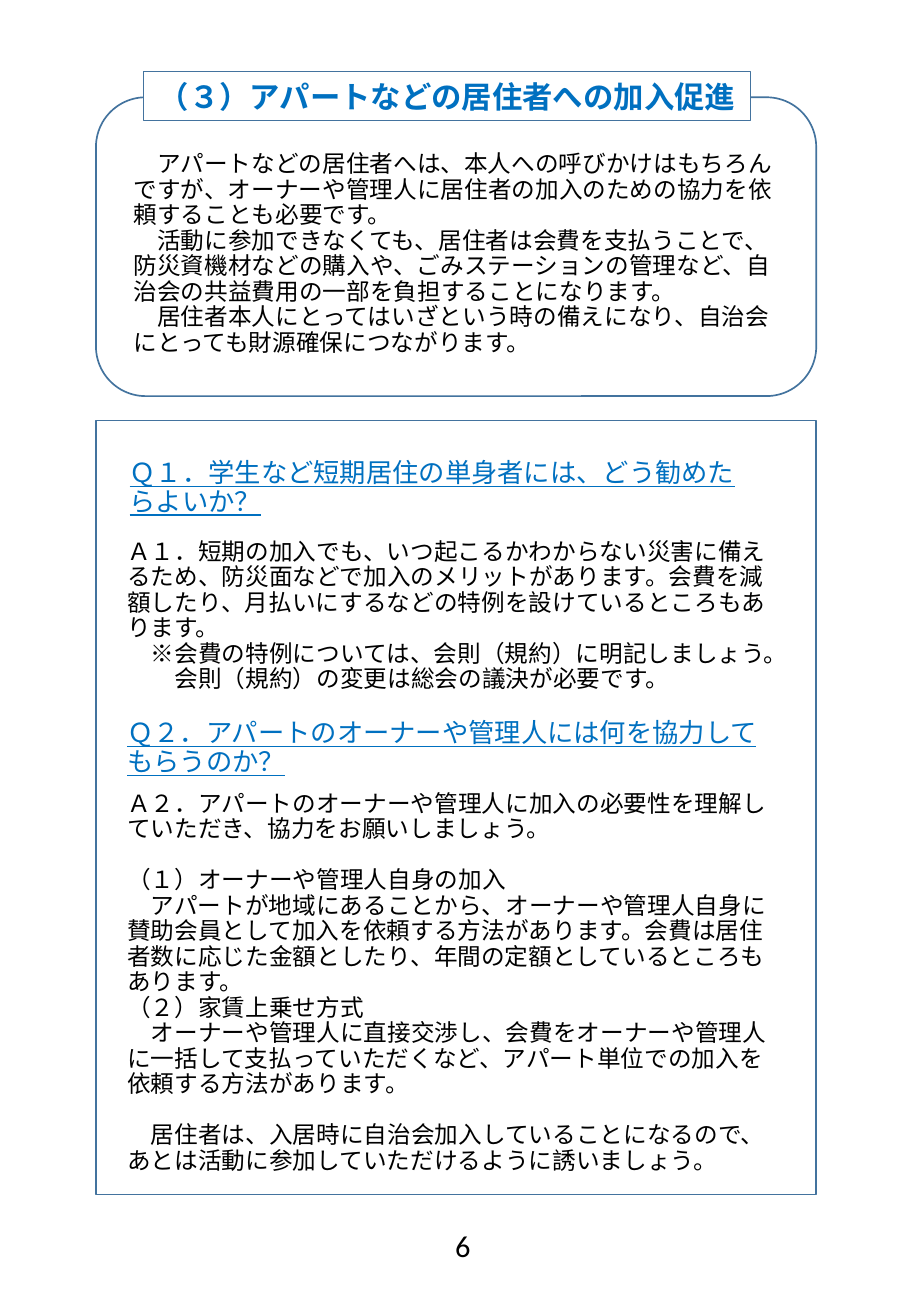
from lxml import etree
from pptx import Presentation
from pptx import util as u
from pptx.dml import color
from pptx.enum import shapes, text
from pptx.oxml import ns

WIDTH, HEIGHT = u.Inches(7.5), u.Inches(10.83)
JAPANESE, LATIN = "Noto Sans CJK JP", "Calibri"
BLUE, BLACK, WHITE, BORDER = "0070C0", "000000", "FFFFFF", "43739E"
BODY_SIZE, QUESTION_SIZE, HEADING_SIZE = 14, 15.6, 18
LINE_RATIO = 1.08  # line pitch as a multiple of the text size

# Paragraphs: first-line indent in characters, blank lines before, wording
INTRO = [
    (1, 0, "アパートなどの居住者へは、本人への呼びかけはもちろんですが、オーナーや管理人に居住者の加入のための協力を依頼することも必要です。"),
    (1, 0, "活動に参加できなくても、居住者は会費を支払うことで、防災資機材などの購入や、ごみステーションの管理など、自治会の共益費用の一部を負担することになります。"),
    (1, 0, "居住者本人にとってはいざという時の備えになり、自治会にとっても財源確保につながります。"),
]
QUESTION_1 = [(0, 0, "Ｑ１．学生など短期居住の単身者には、どう勧めたらよいか？")]
ANSWER_1 = [
    (0, 0, "Ａ１．短期の加入でも、いつ起こるかわからない災害に備えるため、防災面などで加入のメリットがあります。会費を減額したり、月払いにするなどの特例を設けているところもあります。"),
    (1, 0, "※会費の特例については、会則（規約）に明記しましょう。"),
    (2, 0, "会則（規約）の変更は総会の議決が必要です。"),
]
QUESTION_2 = [(0, 0, "Ｑ２．アパートのオーナーや管理人には何を協力してもらうのか？")]
ANSWER_2 = [
    (0, 0, "Ａ２．アパートのオーナーや管理人に加入の必要性を理解していただき、協力をお願いしましょう。"),
    (0, 1, "（１）オーナーや管理人自身の加入"),
    (1, 0, "アパートが地域にあることから、オーナーや管理人自身に賛助会員として加入を依頼する方法があります。会費は居住者数に応じた金額としたり、年間の定額としているところもあります。"),
    (0, 0, "（２）家賃上乗せ方式"),
    (1, 0, "オーナーや管理人に直接交渉し、会費をオーナーや管理人に一括して支払っていただくなど、アパート単位での加入を依頼する方法があります。"),
    (1, 1, "居住者は、入居時に自治会加入していることになるので、あとは活動に参加していただけるように誘いましょう。"),
]


def rgb(value):
    return color.RGBColor.from_string(value)


def share(left, top, width, height):
    """Turn percentages of the slide into lengths."""
    return [round(part * whole / 100) for part, whole in
            zip((left, top, width, height), (WIDTH, HEIGHT) * 2)]


def place(slide, shape, area):
    """Move a placeholder to its area and in front of what is drawn so far."""
    shape.left, shape.top, shape.width, shape.height = share(*area)
    slide.shapes._spTree.append(shape._element)
    return shape


def outline(shape, fill=None, weight=1):
    if fill:
        shape.fill.solid()
        shape.fill.fore_color.rgb = rgb(fill)
    else:
        shape.fill.background()
    shape.line.color.rgb = rgb(BORDER)
    shape.line.width = u.Pt(weight)


def add_frame(slide, kind, area, fill=None):
    frame = slide.shapes.add_shape(kind, *share(*area))
    frame.shadow.inherit = False
    outline(frame, fill)


def add_text_box(slide, area):
    return slide.shapes.add_textbox(*share(*area))


def write(shape, paragraphs, size=BODY_SIZE, ink=BLACK, font=JAPANESE, bold=False,
          underline=False, align=text.PP_ALIGN.LEFT, anchor=text.MSO_ANCHOR.BOTTOM,
          pitch=LINE_RATIO, bottom=0.05, right=0.1):
    frame = shape.text_frame
    frame.word_wrap = True
    frame.auto_size = text.MSO_AUTO_SIZE.NONE
    frame.vertical_anchor = anchor
    frame.margin_left, frame.margin_right = u.Inches(0.1), u.Inches(right)
    frame.margin_top, frame.margin_bottom = u.Inches(0.05), u.Inches(bottom)
    for index, (indent, blank_lines, wording) in enumerate(paragraphs):
        paragraph = frame.paragraphs[0] if index == 0 else frame.add_paragraph()
        paragraph.alignment = align
        paragraph.line_spacing = u.Pt(size * pitch) if pitch else 1.0
        paragraph.space_before = u.Pt(blank_lines * size * LINE_RATIO)
        properties = paragraph._p.get_or_add_pPr()
        properties.set("marL", "0")
        properties.set("indent", str(u.Pt(indent * size)))
        etree.SubElement(properties, ns.qn("a:buNone"))
        run = paragraph.add_run()
        run.text = wording
        run.font.size = u.Pt(size)
        run.font.bold, run.font.underline = bold, underline
        run.font.color.rgb = rgb(ink)
        run.font.name = font
        east_asian = etree.SubElement(run._r.get_or_add_rPr(), ns.qn("a:ea"))
        east_asian.set("typeface", font)


def add_question(slide, area, paragraphs):
    write(add_text_box(slide, area), paragraphs, size=QUESTION_SIZE, ink=BLUE,
          underline=True, bottom=0.43, right=0.12)


def main():
    presentation = Presentation()
    presentation.slide_width, presentation.slide_height = WIDTH, HEIGHT
    slide = presentation.slides.add_slide(presentation.slide_layouts[1])
    title, body = slide.placeholders[0], slide.placeholders[1]

    # Frames
    add_frame(slide, shapes.MSO_SHAPE.RECTANGLE, (10.53, 31.95, 79.07, 58.82), WHITE)
    add_frame(slide, shapes.MSO_SHAPE.ROUNDED_RECTANGLE, (10.53, 7.39, 79.07, 22.71))

    # Heading and introduction
    place(slide, title, (15.73, 5.45, 66.67, 3.69))
    outline(title, WHITE, weight=0.75)
    write(title, [(0, 0, "（３）アパートなどの居住者への加入促進")], size=HEADING_SIZE,
          ink=BLUE, bold=True, align=text.PP_ALIGN.CENTER,
          anchor=text.MSO_ANCHOR.MIDDLE, pitch=None)
    write(place(slide, body, (13.33, 15.14, 73.47, 12.37)), INTRO)

    # Questions and answers
    add_question(slide, (12.93, 33.33, 72, 9.88), QUESTION_1)
    write(add_text_box(slide, (12.67, 40.72, 73.47, 12.37)), ANSWER_1)
    add_question(slide, (12.67, 53.09, 74.13, 9.88), QUESTION_2)
    write(add_text_box(slide, (12.67, 67.68, 73.47, 21.98)), ANSWER_2)

    # Page number
    write(add_text_box(slide, (45.73, 92.8, 10.13, 3.69)), [(0, 0, "6")],
          size=HEADING_SIZE, font=LATIN, align=text.PP_ALIGN.CENTER,
          anchor=text.MSO_ANCHOR.TOP, pitch=None)

    presentation.save("out.pptx")


if __name__ == "__main__":
    main()
